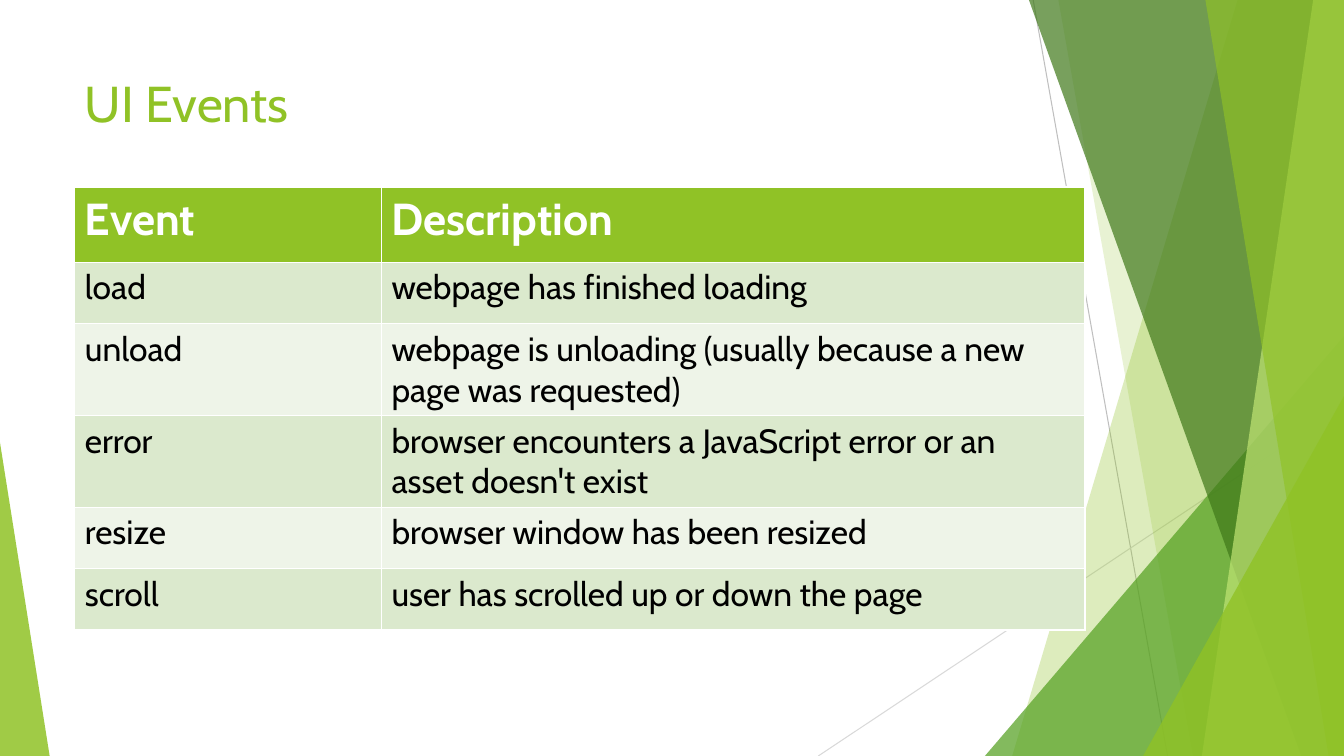
from pptx import Presentation
from pptx.dml.color import RGBColor
from pptx.enum.shapes import MSO_CONNECTOR, MSO_SHAPE
from pptx.enum.text import MSO_ANCHOR, PP_ALIGN
from pptx.oxml.ns import qn
from pptx.util import Pt
from lxml import etree

STRAIGHT = MSO_CONNECTOR.STRAIGHT
TRIANGLE = MSO_SHAPE.ISOSCELES_TRIANGLE
TOP = MSO_ANCHOR.TOP
LEFT = PP_ALIGN.LEFT
FONT = "Cabin"
LIME = "90C226"
WIDTH, HEIGHT = 960, 540


def color(hex_code):
    return RGBColor.from_string(hex_code)


def paint(shape, hex_code, opacity):
    """Fill a shape without outline or shadow; opacity is in percent."""
    shape.shadow.inherit = False
    shape.line.fill.background()
    shape.fill.solid()
    shape.fill.fore_color.rgb = color(hex_code)
    tint = next(shape.element.spPr.iter(qn("a:srgbClr")))
    etree.SubElement(tint, qn("a:alpha")).set("val", str(opacity * 1000))


deck = Presentation()
deck.slide_width, deck.slide_height = Pt(WIDTH), Pt(HEIGHT)
page = deck.slides.add_slide(deck.slide_layouts[5])  # Title Only
shapes = page.shapes

# Thin background lines
for x1, y1, x2, y2, hex_code in [
    (738, 0, 834, HEIGHT, "BFBFBF"),
    (WIDTH, 290, 584.5, HEIGHT, "D9D9D9"),
]:
    line = shapes.add_connector(STRAIGHT, Pt(x1), Pt(y1), Pt(x2), Pt(y2))
    line.line.color.rgb = color(hex_code)
    line.line.width = Pt(0.75)
    etree.SubElement(line.element.spPr, qn("a:effectLst"))

# Facets, back to front: a band runs from its top x and bottom x to the right
# edge; a triangle has left, top, width and apex position.
facets = [
    ("band", (884, 723), LIME, 30),
    ("band", (756, 852), LIME, 20),
    ("triangle", (703.5, 240, 256.5, 1), "54A021", 72),
    ("band", (735, 929.5), "3F7819", 70),
    ("band", (938, 858.5), "C0E474", 70),
    ("band", (861, 949), LIME, 65),
    ("triangle", (816.5, 283, 143.5, 1), LIME, 80),
    ("triangle", (0, 316, 35.5, 0), LIME, 85),
]
for kind, geometry, hex_code, opacity in facets:
    if kind == "band":
        top_x, bottom_x = geometry
        outline = shapes.build_freeform(Pt(top_x), Pt(0))
        corners = [(WIDTH, 0), (WIDTH, HEIGHT), (bottom_x, HEIGHT)]
        outline.add_line_segments([(Pt(x), Pt(y)) for x, y in corners], close=True)
        facet = outline.convert_to_shape()
    else:
        left, top, width, apex = geometry
        facet = shapes.add_shape(TRIANGLE, Pt(left), Pt(top), Pt(width), Pt(HEIGHT - top))
        facet.adjustments[0] = apex
    paint(facet, hex_code, opacity)

# Title
title = shapes.title
title.left, title.top, title.width, title.height = Pt(53.5), Pt(48), Pt(677), Pt(58)
title.text_frame.text = "UI Events"
title.text_frame.vertical_anchor = TOP
para = title.text_frame.paragraphs[0]
para.alignment = LEFT
para.font.name, para.font.size = FONT, Pt(36)
para.font.color.rgb = color(LIME)

# Event table
events = [
    ("Event", "Description"),
    ("load", "webpage has finished loading"),
    ("unload", "webpage is unloading (usually because a new page was requested)"),
    ("error", "browser encounters a JavaScript error or an asset doesn't exist"),
    ("resize", "browser window has been resized"),
    ("scroll", "user has scrolled up or down the page"),
]
column_widths = (219, 502.5)
table = shapes.add_table(
    len(events), 2, Pt(53.5), Pt(133.5), Pt(sum(column_widths)), Pt(274)
).table
for column, width in zip(table.columns, column_widths):
    column.width = Pt(width)

for row_index, texts in enumerate(events):
    is_header = row_index == 0
    table.rows[row_index].height = Pt(54 if is_header else 43.8)
    band_fill = "DBE9CD" if row_index % 2 else "EEF4E8"
    for column_index, text in enumerate(texts):
        cell = table.cell(row_index, column_index)
        cell.fill.solid()
        cell.fill.fore_color.rgb = color(LIME if is_header else band_fill)
        cell.text = text
        font = cell.text_frame.paragraphs[0].font
        font.name, font.size = FONT, Pt(32 if is_header else 24)
        font.bold = is_header
        font.color.rgb = color("FFFFFF" if is_header else "000000")

deck.save("out.pptx")
